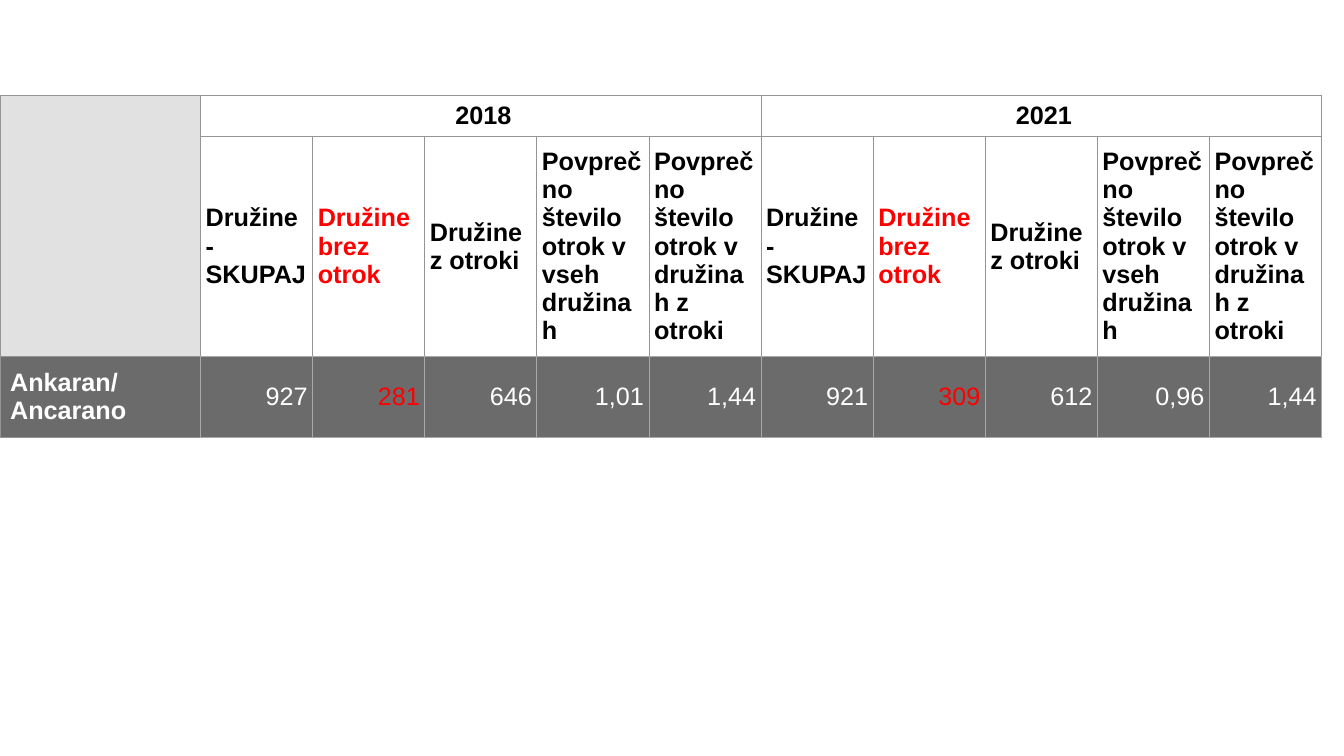
"""Build a slide with a table of families in Ankaran/Ancarano, 2018 and 2021."""
from dataclasses import dataclass
from typing import Optional

from lxml import etree
from pptx import Presentation
from pptx import util as u
from pptx.dml.color import RGBColor
from pptx.enum import text
from pptx.oxml import ns
from pptx.table import _Cell

BLACK, WHITE, RED = "000000", "FFFFFF", "FF0000"
DARK, PALE = "6B6B6B", "E1E1E1"
HEAD_LINE, BODY_LINE = "949494", "A9A9A9"
LEFT, CENTER, RIGHT = text.PP_ALIGN.LEFT, text.PP_ALIGN.CENTER, text.PP_ALIGN.RIGHT

WIDTH, LABEL_WIDTH = 13.11, 1.99
ROW_HEIGHTS = [0.4, 2.19, 0.8]
YEARS = {
    "2018": ["927", "281", "646", "1,01", "1,44"],
    "2021": ["921", "309", "612", "0,96", "1,44"],
}
MEASURES = [
    "Družine - SKUPAJ",
    "Družine brez otrok",
    "Družine z otroki",
    "Povprečno število otrok v vseh družinah",
    "Povprečno število otrok v družinah z otroki",
]
RED_MEASURE = 1


@dataclass
class CellStyle:
    color: str = BLACK
    bold: bool = True
    align: text.PP_ALIGN = LEFT
    fill: Optional[str] = None
    line: str = HEAD_LINE
    margin_left: float = 0.05
    margin: float = 0.05


def rgb(value: str) -> RGBColor:
    return RGBColor.from_string(value)


def add_borders(cell: _Cell, color: str) -> None:
    tc_pr = cell._tc.get_or_add_tcPr()
    for side in ("lnL", "lnR", "lnT", "lnB"):
        ln = etree.SubElement(tc_pr, ns.qn(f"a:{side}"), w=str(u.Pt(0.75)))
        fill = etree.SubElement(ln, ns.qn("a:solidFill"))
        etree.SubElement(fill, ns.qn("a:srgbClr"), val=color)


def write_cell(cell: _Cell, wording: str, style: CellStyle) -> None:
    add_borders(cell, style.line)
    if style.fill:
        cell.fill.solid()
        cell.fill.fore_color.rgb = rgb(style.fill)
    else:
        cell.fill.background()
    cell.margin_left = u.Inches(style.margin_left)
    cell.margin_top = cell.margin_right = cell.margin_bottom = u.Inches(style.margin)
    cell.vertical_anchor = text.MSO_ANCHOR.MIDDLE
    cell.text = wording
    p = cell.text_frame.paragraphs[0]
    p.alignment = style.align
    p.font.name, p.font.size, p.font.bold = "Arial", u.Pt(18), style.bold
    p.font.color.rgb = rgb(style.color)


def main() -> None:
    prs = Presentation()
    prs.slide_width, prs.slide_height = u.Inches(13.33), u.Inches(7.5)
    slide = prs.slides.add_slide(prs.slide_layouts[6])

    count = len(MEASURES)
    columns = 1 + count * len(YEARS)
    frame = slide.shapes.add_table(
        len(ROW_HEIGHTS), columns, 0, u.Inches(0.95),
        u.Inches(WIDTH), u.Inches(sum(ROW_HEIGHTS)))
    table = frame.table
    table.first_row = table.horz_banding = False
    for row, height in zip(table.rows, ROW_HEIGHTS):
        row.height = u.Inches(height)
    for column in table.columns:
        column.width = u.Inches((WIDTH - LABEL_WIDTH) / (columns - 1))
    table.columns[0].width = u.Inches(LABEL_WIDTH)

    for row in (0, 1):
        write_cell(table.cell(row, 0), "", CellStyle(fill=PALE))
    table.cell(0, 0).merge(table.cell(1, 0))
    write_cell(table.cell(2, 0), "Ankaran/Ancarano",
               CellStyle(WHITE, fill=DARK, margin_left=0.1, margin=0.1))

    year_style = CellStyle(align=CENTER, margin_left=0.1)
    for group, (year, values) in enumerate(YEARS.items()):
        first = 1 + group * count
        for i, (measure, value) in enumerate(zip(MEASURES, values)):
            column, red = first + i, i == RED_MEASURE
            write_cell(table.cell(0, column), "" if i else year, year_style)
            write_cell(table.cell(1, column), measure,
                       CellStyle(RED if red else BLACK))
            write_cell(table.cell(2, column), value,
                       CellStyle(RED if red else WHITE, False, RIGHT, DARK, BODY_LINE))
        table.cell(0, first).merge(table.cell(0, first + count - 1))

    prs.save("out.pptx")


if __name__ == "__main__":
    main()
